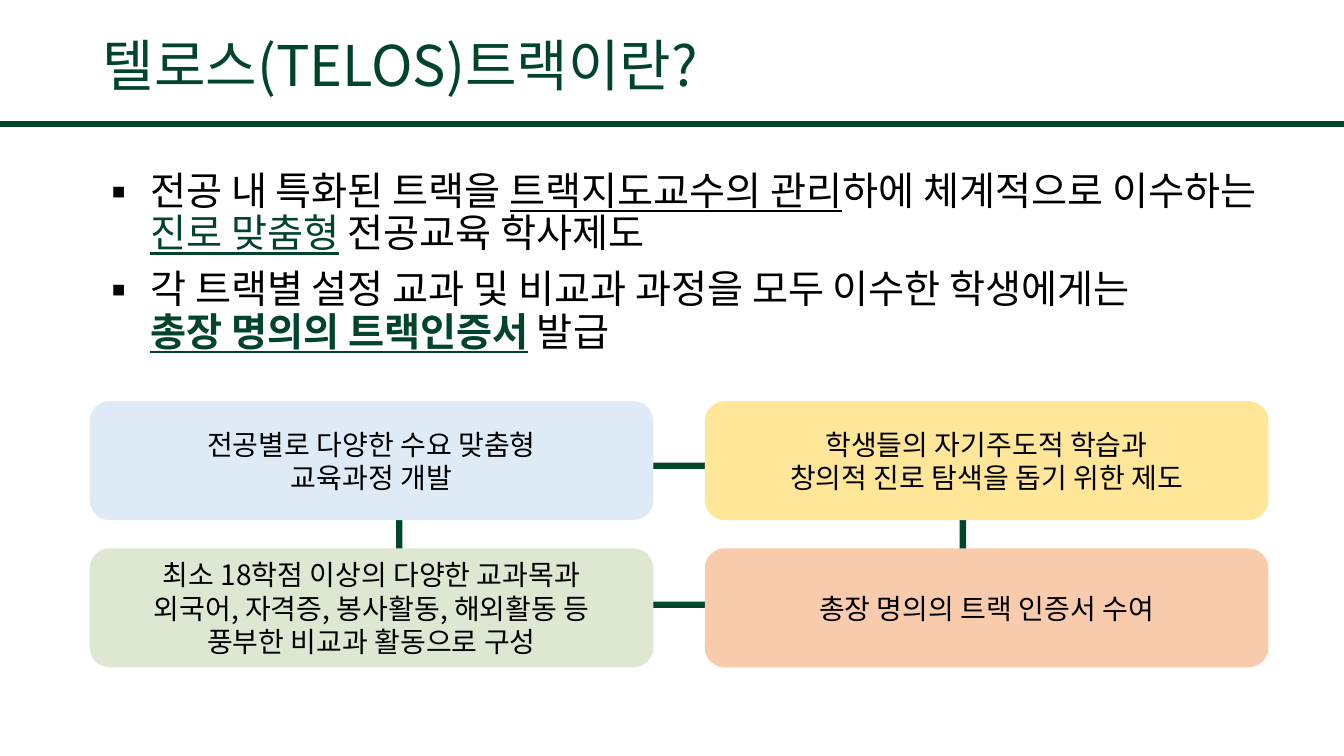
from lxml import etree
from pptx import Presentation
from pptx import util as u
from pptx.dml.color import RGBColor
from pptx.enum import shapes, text
from pptx.oxml.ns import qn

FONT = "Noto Sans CJK KR"
GREEN, BLACK = "004529", "000000"
LEFT, TOP, CARD_W, CARD_H = 0.89, 3.98, 5.59, 1.18
STEP_X, STEP_Y = 6.1, 1.46

TITLE = "텔로스(TELOS)트랙이란?"
PLAIN = {}
UNDERLINED = {"underline": True}
BULLETS = [
    [
        ("전공 내 특화된 트랙을 ", BLACK, PLAIN),
        ("트랙지도교수의 관리", BLACK, UNDERLINED),
        ("하에 체계적으로 이수하는\n", BLACK, PLAIN),
        ("진로 맞춤형", GREEN, UNDERLINED),
        (" 전공교육 학사제도", BLACK, PLAIN),
    ],
    [
        ("각 트랙별 설정 교과 및 비교과 과정을 모두 이수한 학생에게는\n", BLACK, PLAIN),
        ("총장 명의의 트랙인증서", GREEN, {"bold": True, "underline": True}),
        (" 발급", BLACK, PLAIN),
    ],
]
CARDS = [
    ("DEEBF7", ["전공별로 다양한 수요 맞춤형", "교육과정 개발"]),
    ("FFE699", ["학생들의 자기주도적 학습과", "창의적 진로 탐색을 돕기 위한 제도"]),
    ("DEE7D1", ["최소 18학점 이상의 다양한 교과목과",
                "외국어, 자격증, 봉사활동, 해외활동 등",
                "풍부한 비교과 활동으로 구성"]),
    ("F8CBAD", ["총장 명의의 트랙 인증서 수여"]),
]


def rgb(hex_colour):
    """Turn a hex string into a colour."""
    return RGBColor.from_string(hex_colour)


def apply(target, **values):
    """Set each given attribute on the target."""
    for attribute, value in values.items():
        setattr(target, attribute, value)


def place(placeholder, left, top, width, height):
    """Move a placeholder and centre its text vertically."""
    apply(placeholder, left=u.Inches(left), top=u.Inches(top),
          width=u.Inches(width), height=u.Inches(height))
    apply(placeholder.text_frame, word_wrap=True,
          auto_size=text.MSO_AUTO_SIZE.NONE,
          vertical_anchor=text.MSO_ANCHOR.MIDDLE)
    return placeholder.text_frame


def write(paragraph, words, size, colour=BLACK, **style):
    """Add a run, followed by a line break if the words end in one."""
    run = paragraph.add_run()
    run.text = words.rstrip("\n")
    apply(run.font, name=FONT, size=u.Pt(size), **style)
    run.font.color.rgb = rgb(colour)
    latin = run.font._element.find(qn("a:latin"))
    latin.addnext(latin.makeelement(qn("a:ea"), {"typeface": FONT}))
    if words.endswith("\n"):
        paragraph.add_line_break()


def next_paragraph(frame, index):
    """Return the first paragraph of a frame, or a new one after it."""
    return frame.add_paragraph() if index else frame.paragraphs[0]


def add_bullet(paragraph):
    """Give a paragraph a hanging square bullet."""
    properties = paragraph._p.get_or_add_pPr()
    properties.set("marL", str(u.Inches(0.5)))
    properties.set("indent", str(-u.Inches(0.5)))
    etree.SubElement(properties, qn("a:buFont"), typeface=FONT)
    etree.SubElement(properties, qn("a:buChar"), char="▪")


def fill_title(slide):
    """Write the slide title."""
    paragraph = place(slide.shapes.title, 0.92, 0.16, 11.5, 1.03).paragraphs[0]
    apply(paragraph, alignment=text.PP_ALIGN.LEFT, line_spacing=0.9)
    write(paragraph, TITLE, 40, GREEN)


def fill_body(slide):
    """Write the bulleted description of the track."""
    frame = place(slide.placeholders[1], LEFT, 1.67, 11.69, 1.88)
    for index, parts in enumerate(BULLETS):
        paragraph = next_paragraph(frame, index)
        add_bullet(paragraph)
        apply(paragraph, alignment=text.PP_ALIGN.LEFT, line_spacing=0.9,
              space_before=u.Pt(10 if index else 0))
        for words, colour, style in parts:
            write(paragraph, words, 28, colour, **style)


def add_rule(slide, width):
    """Draw the green rule under the title."""
    y = u.Inches(1.23)
    rule = slide.shapes.add_connector(shapes.MSO_CONNECTOR.STRAIGHT, 0, y, width, y)
    rule.line.color.rgb = rgb(GREEN)
    rule.line.width = u.Pt(4.5)
    etree.SubElement(rule._element.spPr, qn("a:effectLst"))


def add_rounded(slide, left, top, width, height):
    """Add a rounded rectangle without a shadow."""
    box = slide.shapes.add_shape(
        shapes.MSO_SHAPE.ROUNDED_RECTANGLE,
        *map(u.Inches, (left, top, width, height)))
    box.shadow.inherit = False
    return box


def add_loop(slide):
    """Draw the outline that links the four cards."""
    loop = add_rounded(slide, 3.96, 4.62, CARD_W, 1.38)
    loop.fill.background()
    loop.line.color.rgb = rgb("00462A")
    loop.line.width = u.Pt(4.5)


def add_card(slide, index, colour, lines):
    """Add one card at its place in the two-by-two grid."""
    row, column = divmod(index, 2)
    card = add_rounded(slide, LEFT + column * STEP_X, TOP + row * STEP_Y,
                       CARD_W, CARD_H)
    card.fill.solid()
    card.fill.fore_color.rgb = rgb(colour)
    card.line.fill.background()
    frame = card.text_frame
    apply(frame, word_wrap=True, vertical_anchor=text.MSO_ANCHOR.MIDDLE)
    for number, line in enumerate(lines):
        paragraph = next_paragraph(frame, number)
        paragraph.alignment = text.PP_ALIGN.CENTER
        write(paragraph, line, 20)


def main():
    """Build and save the slide."""
    deck = Presentation()
    apply(deck, slide_width=u.Inches(13.33), slide_height=u.Inches(7.5))
    slide = deck.slides.add_slide(deck.slide_layouts[1])
    add_rule(slide, deck.slide_width)
    fill_title(slide)
    fill_body(slide)
    add_loop(slide)
    for index, (colour, lines) in enumerate(CARDS):
        add_card(slide, index, colour, lines)
    deck.save("out.pptx")


if __name__ == "__main__":
    main()
